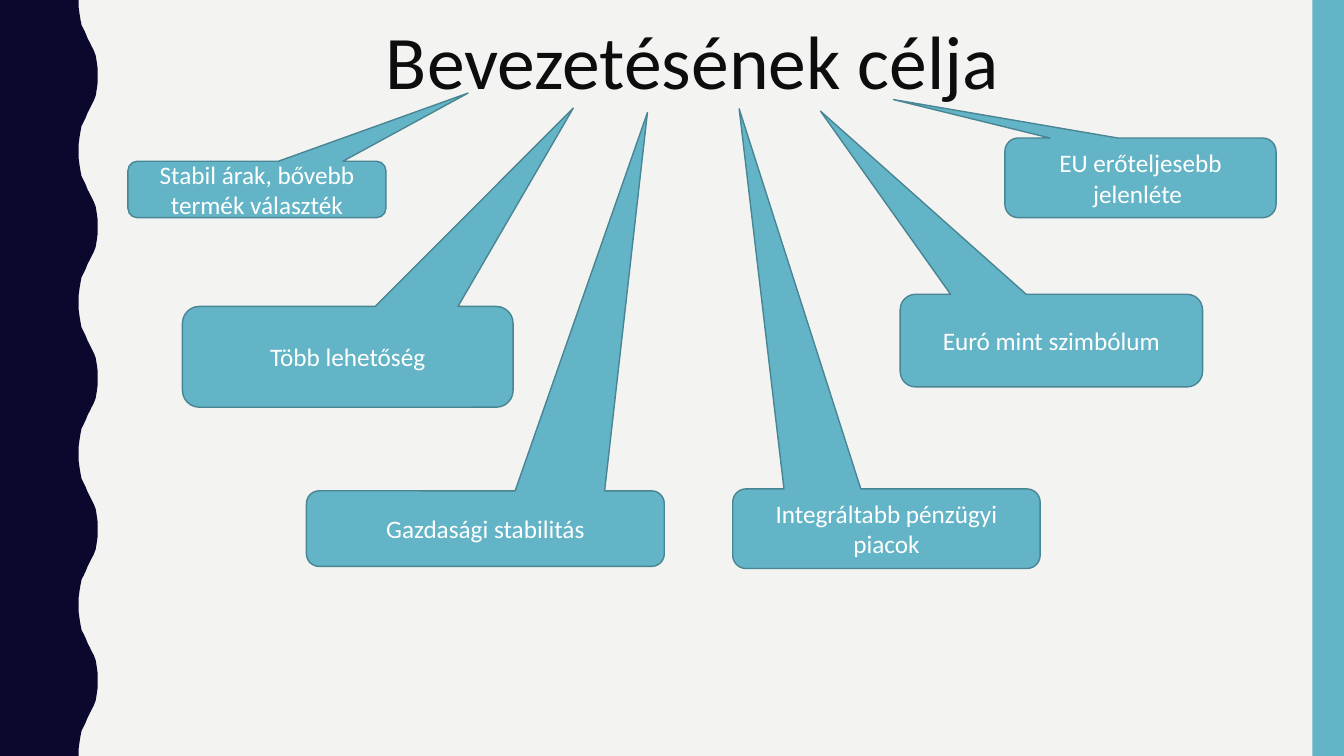
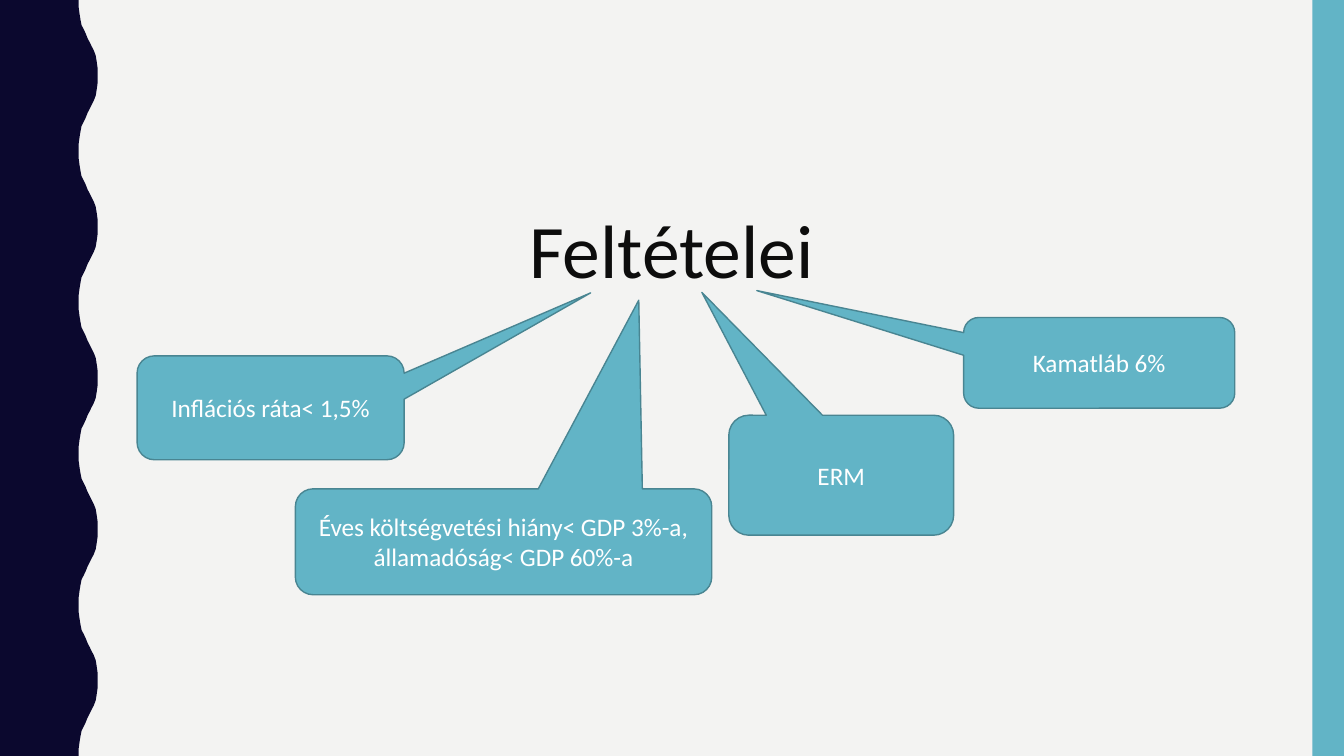
from pptx import Presentation
from pptx.dml.color import RGBColor
from pptx.enum.shapes import MSO_SHAPE
from pptx.enum.text import MSO_ANCHOR, PP_ALIGN
from pptx.util import Pt

WIDTH, HEIGHT = 960, 540
WAVE_PERIOD = 108
WAVE_RISE = [
    (56.2, 0), (56.2, 5), (56.9, 10.1), (57.6, 14.4), (58.3, 18),
    (59.8, 20.9), (61.2, 23.8), (62.6, 27.4), (64.1, 30.2), (65.5, 33.1),
    (67, 36), (68.4, 39.6), (69.1, 43.9), (69.8, 49), (69.8, 54),
]

SLIDES = [
    ("Bevezetésének célja", (268.6, 6.5, 467.3, 72.7), [
        ("Stabil árak, bővebb termék választék", (91.4, 115.2, 184.3, 40.3), (334.4, 66.5)),
        ("Több lehetőség", (130.3, 218.9, 236.2, 72), (409.5, 77.2)),
        ("Gazdasági stabilitás", (218.9, 350.6, 255.6, 54), (462.5, 80.4)),
        ("Integráltabb pénzügyi piacok", (523.4, 349.2, 219.6, 56.9), (528, 77.7)),
        ("EU erőteljesebb jelenléte ", (717.8, 98.6, 193.7, 56.9), (638.2, 71.1)),
        ("Euró mint szimbólum", (643, 210.2, 216, 66.2), (586, 79.3)),
    ]),
    ("Feltételei", (370.8, 141.1, 236.9, 72.7), [
        ("Inflációs ráta< 1,5%", (97.9, 254.2, 190.8, 74.2), (421.9, 209.2)),
        ("Éves költségvetési hiány< GDP 3%-a, államadóság< GDP 60%-a",
         (211, 349.2, 297.4, 75.6), (456.3, 214.4)),
        ("ERM", (520.6, 296.6, 160.6, 85.7), (501.3, 208.8)),
        ("Kamatláb 6%", (688.3, 226.8, 193.7, 64.8), (540.6, 207.6)),
    ]),
]


def color(value):
    return RGBColor.from_string(value)


class Deck:
    """Holds the shared style and draws elements on the current slide."""

    font = "Calibri"
    background = "F3F3F2"
    navy = "0B082E"
    teal = "62B4C6"
    outline = "498592"
    title_color = "0D0D0D"
    label_color = "FFFFFF"

    def __init__(self):
        self.presentation = Presentation()
        self.presentation.slide_width = Pt(WIDTH)
        self.presentation.slide_height = Pt(HEIGHT)
        fill = self.presentation.slide_master.background.fill
        fill.solid()
        fill.fore_color.rgb = color(self.background)
        self.slide = None

    def add_slide(self):
        self.slide = self.presentation.slides.add_slide(self.presentation.slide_layouts[6])
        self.wave()
        self.paint(self.shape(MSO_SHAPE.RECTANGLE, (937.4, 0, 22.6, HEIGHT)), self.teal)

    def shape(self, preset, box):
        return self.slide.shapes.add_shape(preset, *map(Pt, box))

    def paint(self, shape, fill, line=None):
        shape.shadow.inherit = False
        shape.fill.solid()
        shape.fill.fore_color.rgb = color(fill)
        if line:
            shape.line.color.rgb = color(line)
            shape.line.width = Pt(1)
        else:
            shape.line.fill.background()

    def wave(self):
        fall = [(x, WAVE_PERIOD - y) for x, y in reversed(WAVE_RISE[:-1])]
        edge = [(x, y + start) for start in range(0, HEIGHT, WAVE_PERIOD)
                for x, y in WAVE_RISE + fall]
        points = edge + [(0, HEIGHT)]
        builder = self.slide.shapes.build_freeform(0, 0)
        builder.add_line_segments([(Pt(x), Pt(y)) for x, y in points], close=True)
        self.paint(builder.convert_to_shape(), self.navy)

    def set_text(self, shape, text, size, text_color, alignment):
        text_frame = shape.text_frame
        text_frame.text = text
        text_frame.word_wrap = True
        paragraph = text_frame.paragraphs[0]
        paragraph.alignment = alignment
        font = paragraph.runs[0].font
        font.name = self.font
        font.size = Pt(size)
        font.color.rgb = color(text_color)

    def title(self, text, box):
        shape = self.slide.shapes.add_textbox(*map(Pt, box))
        self.set_text(shape, text, 54, self.title_color, PP_ALIGN.LEFT)

    def callout(self, text, box, tip):
        left, top, width, height = box
        shape = self.shape(MSO_SHAPE.ROUNDED_RECTANGULAR_CALLOUT, box)
        shape.adjustments[0] = (tip[0] - left) / width - 0.5
        shape.adjustments[1] = (tip[1] - top) / height - 0.5
        self.paint(shape, self.teal, self.outline)
        self.set_text(shape, text, 18, self.label_color, PP_ALIGN.CENTER)
        shape.text_frame.vertical_anchor = MSO_ANCHOR.MIDDLE


def main():
    deck = Deck()
    for title, title_box, callouts in SLIDES:
        deck.add_slide()
        deck.title(title, title_box)
        for text, box, tip in callouts:
            deck.callout(text, box, tip)
    deck.presentation.save("out.pptx")


if __name__ == "__main__":
    main()
